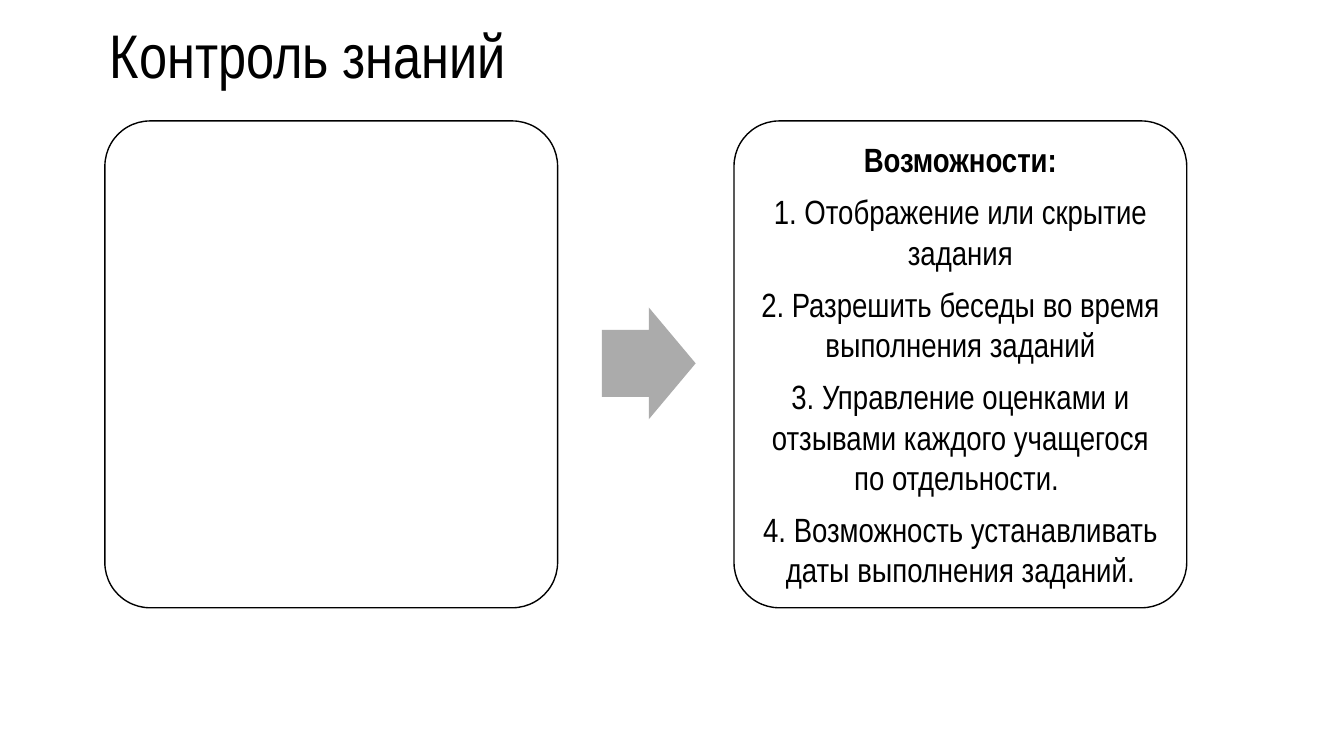
from pptx import Presentation
from pptx.dml.color import RGBColor
from pptx.enum.shapes import MSO_SHAPE
from pptx.enum.text import MSO_ANCHOR, PP_ALIGN
from pptx.util import Inches, Pt

FONT = "Arial Narrow"
BLACK, WHITE, GRAY = "000000", "FFFFFF", "ABABAB"
CARD_TOP, CARD_WIDTH, CARD_HEIGHT = 1.2, 4.49, 4.83
CARD_LEFTS = (1.04, 7.28)
FEATURES = [
    "Возможности:",
    "1. Отображение или скрытие задания",
    "2. Разрешить беседы во время выполнения заданий",
    "3. Управление оценками и отзывами каждого учащегося по отдельности. ",
    "4. Возможность устанавливать даты выполнения заданий.",
]


def color(value):
    return RGBColor.from_string(value)


def add_preset(page, kind, area, fill, adjustments, line=None):
    shape = page.shapes.add_shape(kind, *map(Inches, area))
    shape.shadow.inherit = False
    shape.fill.solid()
    shape.fill.fore_color.rgb = color(fill)
    for index, value in enumerate(adjustments):
        shape.adjustments[index] = value
    if line:
        shape.line.color.rgb = color(line)
        shape.line.width = Pt(1)
    else:
        shape.line.fill.background()


def add_text(page, area, lines, size, margins, paragraph_format, bold_first=False):
    box = page.shapes.add_textbox(*map(Inches, area))
    frame = box.text_frame
    frame_format = {"word_wrap": True, "vertical_anchor": MSO_ANCHOR.MIDDLE}
    for side, margin in zip(("left", "top", "right", "bottom"), margins):
        frame_format[f"margin_{side}"] = Inches(margin)
    for name, value in frame_format.items():
        setattr(frame, name, value)
    for index, line in enumerate(lines):
        para = frame.add_paragraph() if index else frame.paragraphs[0]
        for name, value in paragraph_format.items():
            setattr(para, name, value)
        span = para.add_run()
        span.text = line
        span.font.color.rgb = color(BLACK)
        span_format = {"name": FONT, "size": Pt(size), "bold": bold_first and index == 0}
        for name, value in span_format.items():
            setattr(span.font, name, value)


def main():
    deck = Presentation()
    deck.slide_width, deck.slide_height = Inches(13.33), Inches(7.5)
    page = deck.slides.add_slide(deck.slide_layouts[6])

    # Title
    add_text(page, (0.99, 0.24, 11.5, 0.69), ["Контроль знаний"], 44,
             (0.1, 0.05, 0.1, 0.05), {"line_spacing": 0.9})

    # Two cards joined by an arrow
    for left in CARD_LEFTS:
        add_preset(page, MSO_SHAPE.ROUNDED_RECTANGLE,
                   (left, CARD_TOP, CARD_WIDTH, CARD_HEIGHT), WHITE, [0.1], BLACK)
    add_preset(page, MSO_SHAPE.RIGHT_ARROW, (5.97, 3.05, 0.93, 1.11), GRAY, [0.6, 0.5])

    # Feature list inside the right card
    inset = 0.13
    area = (CARD_LEFTS[1] + inset, CARD_TOP + inset,
            CARD_WIDTH - 2 * inset, CARD_HEIGHT - 2 * inset)
    add_text(page, area, FEATURES, 24, (0.1,) * 4,
             {"alignment": PP_ALIGN.CENTER, "space_after": Pt(8.4)}, bold_first=True)

    deck.save("out.pptx")


if __name__ == "__main__":
    main()
